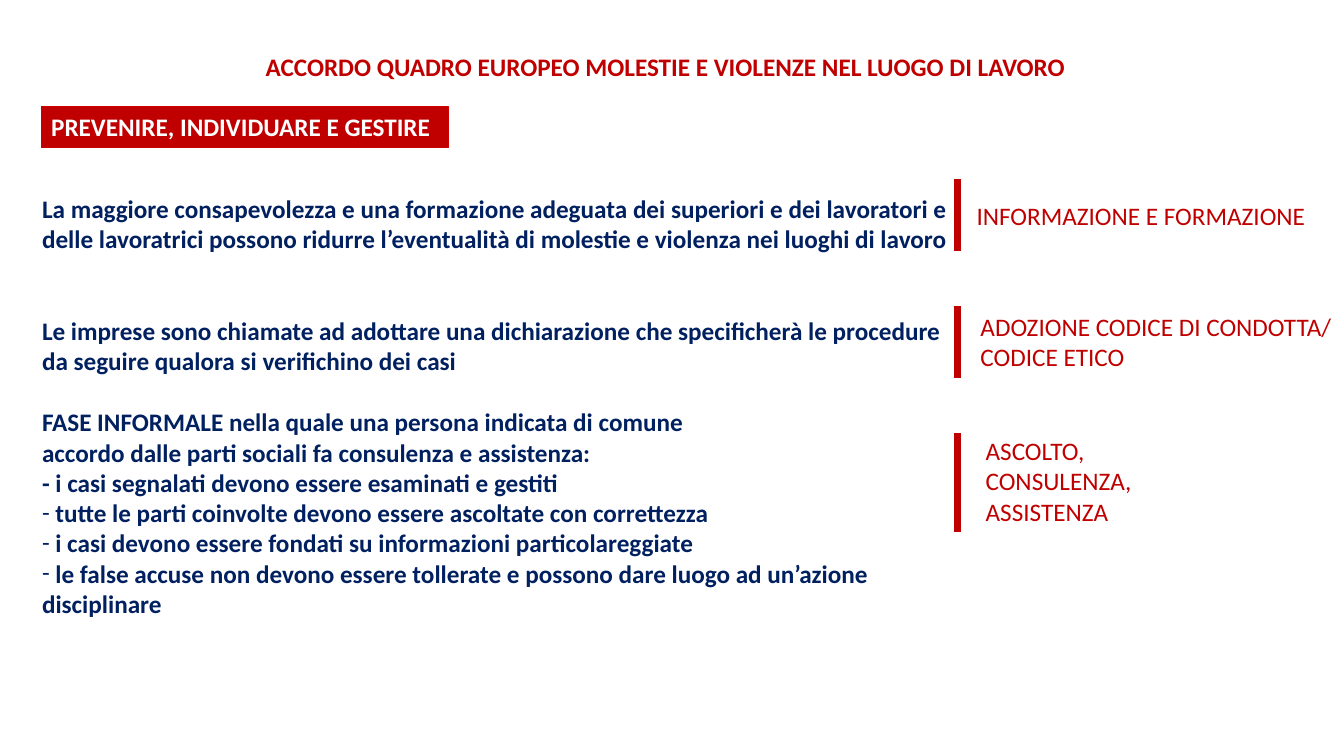
"""Build the slide on preventing harassment and violence in the workplace."""
from dataclasses import dataclass

from lxml import etree
from pptx import Presentation
from pptx import util as u
from pptx.dml.color import RGBColor
from pptx.enum import shapes, text
from pptx.oxml.ns import qn


@dataclass(frozen=True)
class Theme:
    font: str = "Calibri"
    size: int = 18
    line_height: int = 22
    red: RGBColor = RGBColor(0xC0, 0x00, 0x00)
    border: RGBColor = RGBColor(0xCC, 0x00, 0x00)
    navy: RGBColor = RGBColor(0x00, 0x20, 0x60)
    white: RGBColor = RGBColor(0xFF, 0xFF, 0xFF)


theme = Theme()


def write(frame, lines, color=theme.red, bold=False, align=text.PP_ALIGN.LEFT, gaps=(), dashes=()):
    """Fill a text frame; gaps maps a line's index to the empty lines before it."""
    frame.word_wrap = True
    frame.auto_size = text.MSO_AUTO_SIZE.NONE
    frame.vertical_anchor = text.MSO_ANCHOR.TOP
    for index, line in enumerate(lines):
        paragraph = frame.add_paragraph() if index else frame.paragraphs[0]
        paragraph.alignment = align
        paragraph.line_spacing = 1.0
        paragraph.space_before = u.Pt(theme.line_height * dict(gaps).get(index, 0))
        if index in dashes:
            properties = paragraph._p.get_or_add_pPr()
            properties.set("marL", "0")
            properties.set("indent", "0")
            etree.SubElement(properties, qn("a:buFont")).set("typeface", theme.font)
            etree.SubElement(properties, qn("a:buChar")).set("char", "-")
        run = paragraph.add_run()
        run.text = line
        run.font.name = theme.font
        run.font.size = u.Pt(theme.size)
        run.font.bold = bold
        run.font.color.rgb = color


presentation = Presentation()
presentation.slide_width = u.Cm(33.87)
presentation.slide_height = u.Cm(19.05)
slide = presentation.slides.add_slide(presentation.slide_layouts[5])

title = slide.shapes.title
title.left, title.top, title.width, title.height = u.Cm(2.17), u.Cm(1.17), u.Cm(29.2), u.Cm(1.02)
write(title.text_frame, ["ACCORDO QUADRO EUROPEO MOLESTIE E VIOLENZE NEL LUOGO DI LAVORO"],
      bold=True, align=text.PP_ALIGN.CENTER)

body = slide.shapes.add_textbox(u.Cm(0.81), u.Cm(4.75), u.Cm(23.65), u.Cm(11.13))
write(body.text_frame, [
    "La maggiore consapevolezza e una formazione adeguata dei superiori e dei lavoratori e "
    "delle lavoratrici possono ridurre l’eventualità di molestie e violenza nei luoghi di lavoro",
    "Le imprese sono chiamate ad adottare una dichiarazione che specificherà le procedure "
    "da seguire qualora si verifichino dei casi",
    "FASE INFORMALE nella quale una persona indicata di comune",
    "accordo dalle parti sociali fa consulenza e assistenza:",
    "- i casi segnalati devono essere esaminati e gestiti",
    " tutte le parti coinvolte devono essere ascoltate con correttezza",
    " i casi devono essere fondati su informazioni particolareggiate",
    " le false accuse non devono essere tollerate e possono dare luogo ad un’azione disciplinare",
], color=theme.navy, bold=True, gaps={1: 2, 2: 1}, dashes=(5, 6, 7))

banner = slide.shapes.add_shape(shapes.MSO_SHAPE.RECTANGLE, u.Cm(1.04), u.Cm(2.69), u.Cm(10.26), u.Cm(1.02))
banner.shadow.inherit = False
banner.fill.solid()
banner.fill.fore_color.rgb = theme.red
banner.line.color.rgb = theme.border
banner.line.width = u.Pt(0.75)
write(banner.text_frame, ["PREVENIRE, INDIVIDUARE E GESTIRE"], color=theme.white, bold=True)

rule_left = 24.13
slide_right = 33.87
measures = [
    (4.52, 6.32, 24.36, 4.93, 1.02, ["INFORMAZIONE E FORMAZIONE"]),
    (7.72, 9.52, 24.46, 7.72, 1.8, ["ADOZIONE CODICE DI CONDOTTA/ CODICE ETICO"]),
    (10.92, 13.41, 24.59, 10.85, 2.57, ["ASCOLTO,", "CONSULENZA,", "ASSISTENZA"]),
]
for rule_top, rule_bottom, left, top, height, lines in measures:
    label = slide.shapes.add_textbox(u.Cm(left), u.Cm(top), u.Cm(slide_right - left), u.Cm(height))
    label.text_frame.margin_right = 0
    write(label.text_frame, lines)
    rule = slide.shapes.add_connector(shapes.MSO_CONNECTOR.STRAIGHT, u.Cm(rule_left), u.Cm(rule_top),
                                      u.Cm(rule_left), u.Cm(rule_bottom))
    rule.line.color.rgb = theme.red
    rule.line.width = u.Pt(4.5)
    etree.SubElement(rule._element.spPr, qn("a:effectLst"))

presentation.save("out.pptx")
